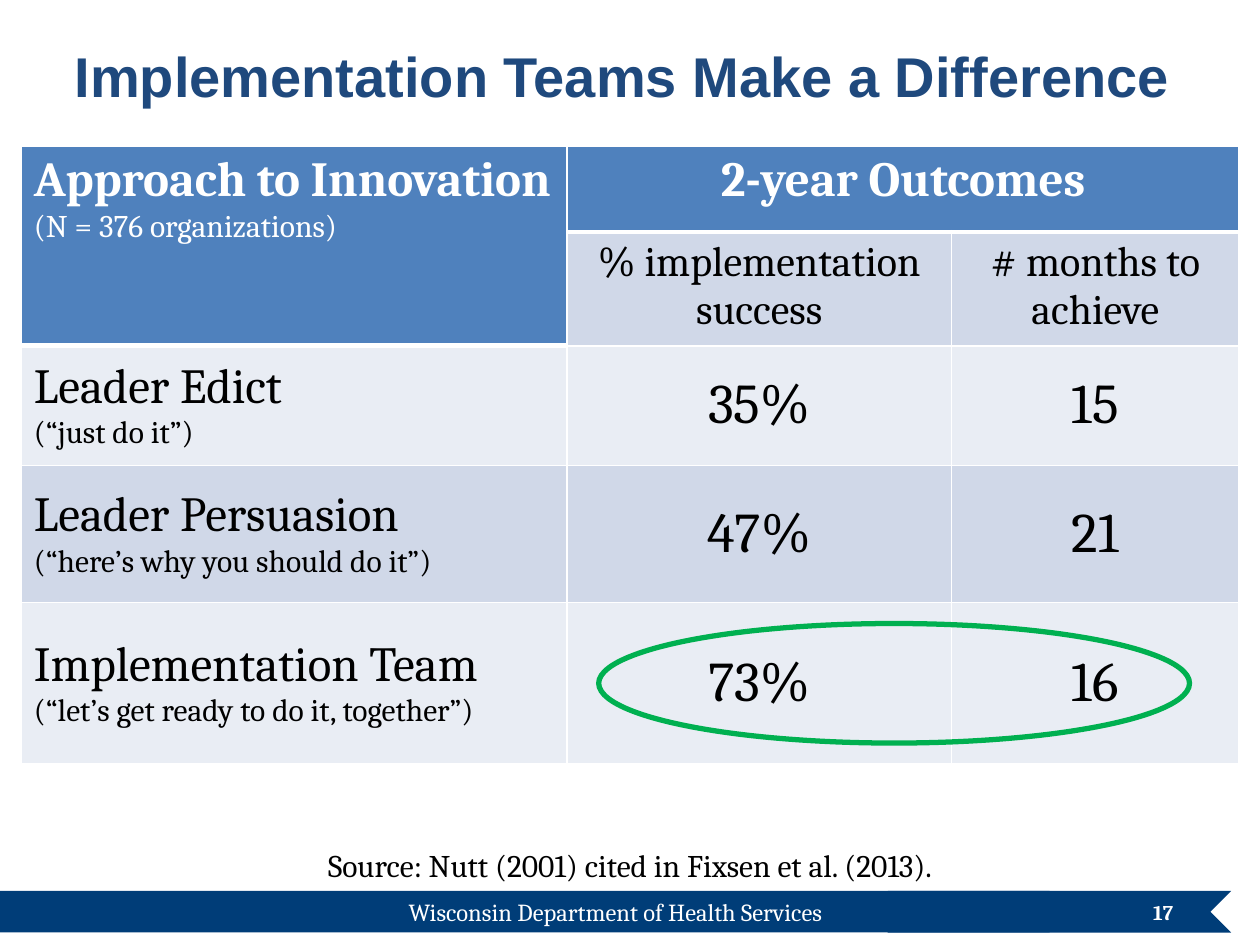
"""Build the slide comparing approaches to innovation by two-year outcomes."""
from lxml import etree
from pptx import Presentation
from pptx.dml.color import RGBColor
from pptx.enum.shapes import MSO_SHAPE as Preset
from pptx.enum.text import MSO_ANCHOR as Anchor, PP_ALIGN as Align
from pptx.oxml.ns import qn
from pptx.util import Cm, Pt

WHITE = RGBColor(0xFF, 0xFF, 0xFF)
BLACK = RGBColor(0x00, 0x00, 0x00)
NAVY = RGBColor(0x00, 0x3D, 0x78)
TITLE_BLUE = RGBColor(0x1F, 0x49, 0x7D)
HEADER_BLUE = RGBColor(0x4F, 0x81, 0xBD)
BAND_DARK = RGBColor(0xD0, 0xD8, 0xE8)
BAND_LIGHT = RGBColor(0xE9, 0xED, 0xF4)
GREEN = RGBColor(0x00, 0xB0, 0x50)

TITLE = "Implementation Teams Make a Difference"
SOURCE = "Source: Nutt (2001) cited in Fixsen et al. (2013)."
AGENCY = "Wisconsin Department of Health Services"
PAGE_NUMBER = "17"
APPROACH_HEADER = ("Approach to Innovation", "(N = 376 organizations)")
OUTCOMES_HEADER = "2-year Outcomes"
MEASURES = ("% implementation success", "# months to achieve")
APPROACHES = [
    ("Leader Edict", "(“just do it”)", "35%", "15"),
    ("Leader Persuasion", "(“here’s why you should do it”)", "47%", "21"),
    ("Implementation Team", "(“let’s get ready to do it, together”)", "73%", "16"),
]
COLUMN_WIDTHS = (11, 7.75, 5.8)
ROW_HEIGHTS = (1.73, 2.29, 2.41, 2.77, 3.25)
TABLE_LEFT, TABLE_TOP = 0.43, 2.95
FOOTER_TOP, FOOTER_HEIGHT = 17.96, 0.84


def write_lines(text_frame, lines, sizes, color, align, bold=False, font="Cambria"):
    text_frame.text = "\n".join(lines)
    for index, (paragraph, size) in enumerate(zip(text_frame.paragraphs, sizes)):
        paragraph.alignment = align
        for run in paragraph.runs:
            run.font.size = Pt(size)
            run.font.name = font
            run.font.bold = bold and index == 0
            run.font.color.rgb = color


def add_text(slide, box, text, size, color, align=Align.CENTER, anchor=Anchor.TOP, **style):
    text_frame = slide.shapes.add_textbox(*map(Cm, box)).text_frame
    text_frame.word_wrap = True
    text_frame.vertical_anchor = anchor
    write_lines(text_frame, [text], [size], color, align, **style)


def add_preset(slide, preset, box):
    shape = slide.shapes.add_shape(preset, *map(Cm, box))
    shape.shadow.inherit = False
    return shape


def set_borders(cell, top, bottom):
    properties = cell._tc.get_or_add_tcPr()
    widths = {"a:lnL": 1, "a:lnR": 1, "a:lnT": top, "a:lnB": bottom}
    for index, (tag, width) in enumerate(widths.items()):
        line = etree.Element(qn(tag), w=str(Pt(width)))
        fill = etree.SubElement(line, qn("a:solidFill"))
        etree.SubElement(fill, qn("a:srgbClr"), val=str(WHITE))
        properties.insert(index, line)


def fill_cell(cell, lines, sizes, color, align, anchor=Anchor.TOP, bold=False):
    write_lines(cell.text_frame, lines, sizes, color, align, bold)
    cell.vertical_anchor = anchor


def add_outcomes_table(slide):
    shape = slide.shapes.add_table(
        len(ROW_HEIGHTS), len(COLUMN_WIDTHS), Cm(TABLE_LEFT), Cm(TABLE_TOP),
        Cm(sum(COLUMN_WIDTHS)), Cm(sum(ROW_HEIGHTS)))
    table = shape.table
    for column, width in zip(table.columns, COLUMN_WIDTHS):
        column.width = Cm(width)
    for row, height in zip(table.rows, ROW_HEIGHTS):
        row.height = Cm(height)

    for row in range(len(ROW_HEIGHTS)):
        for column in range(len(COLUMN_WIDTHS)):
            cell = table.cell(row, column)
            last_header = 1 if column == 0 else 0
            band = BAND_DARK if row % 2 else BAND_LIGHT
            set_borders(cell, 3 if row == last_header + 1 else 1,
                        3 if row == last_header or row == 0 else 1)
            cell.fill.solid()
            cell.fill.fore_color.rgb = HEADER_BLUE if row <= last_header else band

    table.cell(0, 0).merge(table.cell(1, 0))
    table.cell(0, 1).merge(table.cell(0, 2))
    fill_cell(table.cell(0, 0), APPROACH_HEADER, (28, 18), WHITE, Align.LEFT, bold=True)
    fill_cell(table.cell(0, 1), [OUTCOMES_HEADER], [28], WHITE, Align.CENTER, bold=True)
    for column, measure in enumerate(MEASURES, 1):
        fill_cell(table.cell(1, column), [measure], [24], BLACK, Align.CENTER)
    for row, (name, motto, *values) in enumerate(APPROACHES, 2):
        fill_cell(table.cell(row, 0), (name, motto), (28, 18), BLACK, Align.LEFT, Anchor.MIDDLE)
        for column, value in enumerate(values, 1):
            fill_cell(table.cell(row, column), [value], [32], BLACK, Align.CENTER, Anchor.MIDDLE)


def add_footer(slide):
    bands = [
        (Preset.CHEVRON, 17.48, 7.34, 180),
        (Preset.RECTANGLE, -0.84, 22, 0),
    ]
    for preset, left, width, rotation in bands:
        band = add_preset(slide, preset, (left, FOOTER_TOP, width, FOOTER_HEIGHT))
        band.rotation = rotation
        band.fill.solid()
        band.fill.fore_color.rgb = NAVY
        band.line.fill.background()
    add_text(slide, (0, FOOTER_TOP, 24.82, 0.86), AGENCY, 14, WHITE)
    add_text(slide, (17.98, 17.88, 5.92, 1.02), PAGE_NUMBER, 12, WHITE,
             Align.RIGHT, Anchor.MIDDLE, bold=True)


def main():
    presentation = Presentation()
    presentation.slide_width, presentation.slide_height = Cm(25.4), Cm(19.05)
    slide = presentation.slides.add_slide(presentation.slide_layouts[6])
    add_footer(slide)
    add_outcomes_table(slide)
    add_text(slide, (2.24, 16.94, 20.93, 1.02), SOURCE, 18, BLACK)
    add_text(slide, (0.84, 0.08, 23.42, 2.87), TITLE, 32, TITLE_BLUE,
             anchor=Anchor.MIDDLE, bold=True, font="Arial")
    highlight = add_preset(slide, Preset.OVAL, (12.07, 12.57, 11.91, 2.41))
    highlight.fill.background()
    highlight.line.color.rgb = GREEN
    highlight.line.width = Pt(3)
    presentation.save("out.pptx")


if __name__ == "__main__":
    main()
